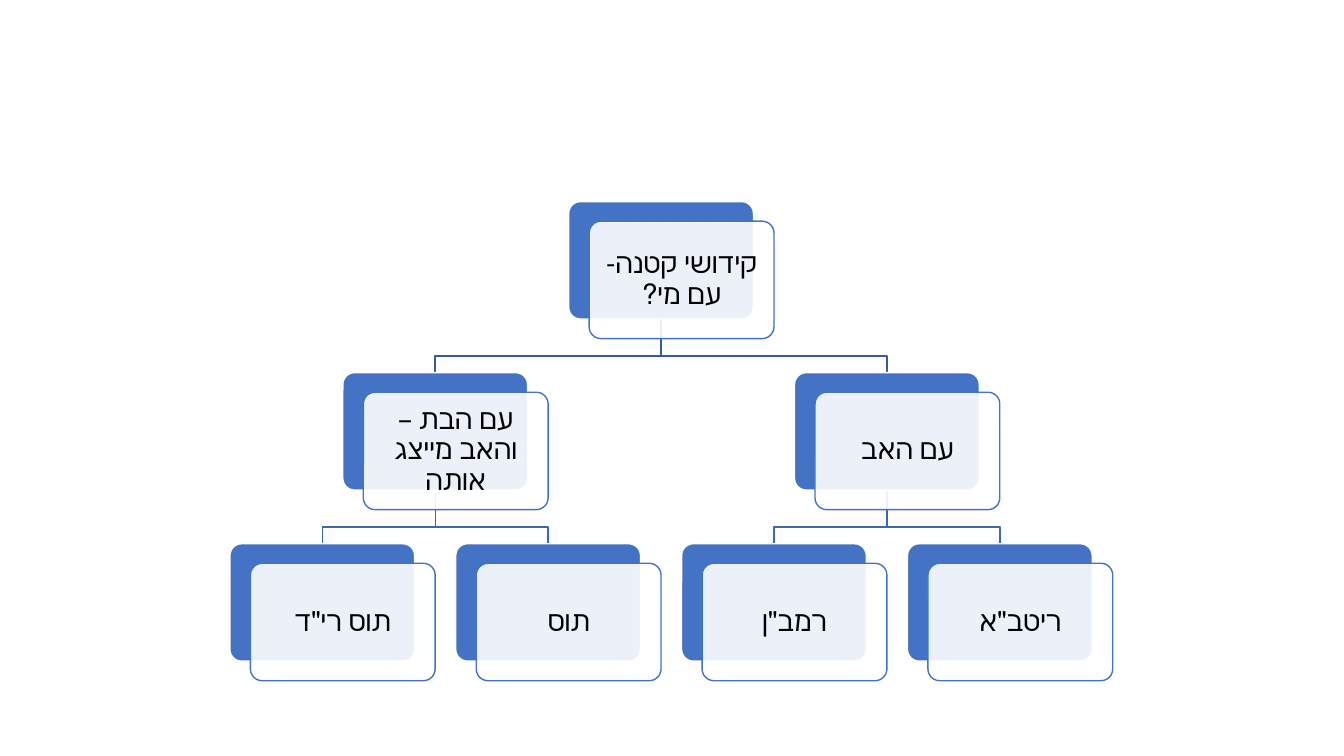
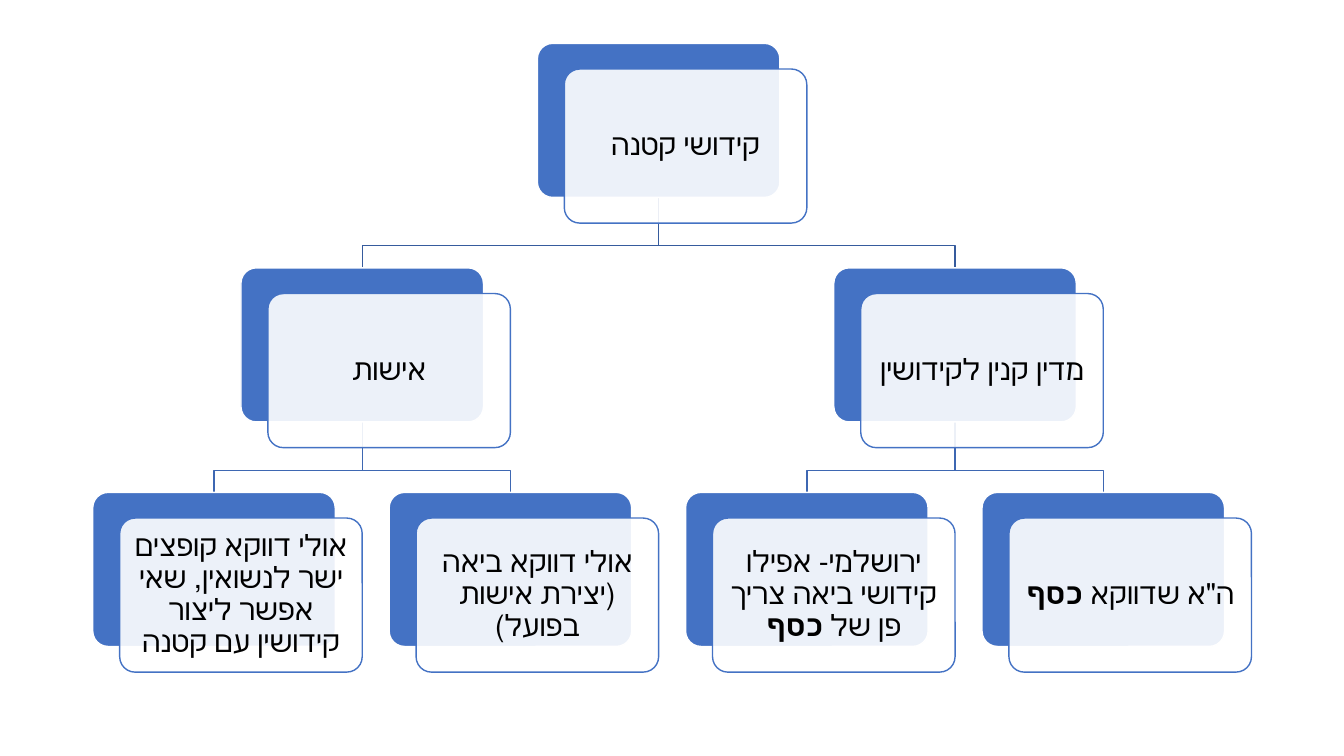
"""Two slides of right-to-left hierarchy trees made of layered cards."""
import pptx
import pptx.util
import pptx.dml.color
import pptx.enum.shapes
import pptx.enum.text
import pptx.oxml.ns
from lxml import etree

RGB = pptx.dml.color.RGBColor
BLUE = RGB(0x44, 0x72, 0xC4)
WHITE = RGB(0xFF, 0xFF, 0xFF)
BLACK = RGB(0x00, 0x00, 0x00)
LINKS = [RGB(0x36, 0x5B, 0x9D), RGB(0x3E, 0x67, 0xB2)]
FONT = "Calibri"
ROUND = pptx.enum.shapes.MSO_SHAPE.ROUNDED_RECTANGLE
Inches, Pt, qn = pptx.util.Inches, pptx.util.Pt, pptx.oxml.ns.qn

TREES = [
    {"left": 2.28, "top": 2, "step": 2.24, "size": 20, "rows": [
        [("קידושי קטנה- עם מי?", "")],
        [("עם הבת – והאב מייצג אותה", ""), ("עם האב", "")],
        [("תוס רי\"ד", ""), ("תוס", ""), ("רמב\"ן", ""), ("ריטב\"א", "")],
    ]},
    {"left": 0.92, "top": 0.43, "step": 2.94, "size": 21, "rows": [
        [("קידושי קטנה", "")],
        [("אישות", ""), ("מדין קנין לקידושין", "")],
        [("אולי דווקא קופצים ישר לנשואין, שאי אפשר ליצור קידושין עם קטנה", ""),
         ("אולי דווקא ביאה (יצירת אישות בפועל)", ""),
         ("ירושלמי- אפילו קידושי ביאה צריך פן של ", "כסף"),
         ("ה\"א שדווקא ", "כסף")],
    ]},
]


def link(slide, start, end, bar, color):
    """Draw a stepped line that turns at the height of the bar."""
    points = [start, (start[0], bar), (end[0], bar), end]
    points = [(Inches(x), Inches(y)) for x, y in points]
    path = slide.shapes.build_freeform(*points[0])
    path.add_line_segments(points[1:], close=False)
    shape = path.convert_to_shape()
    shape.shadow.inherit = False
    shape.fill.background()
    shape.line.color.rgb = color
    shape.line.width = Pt(1)


def card(slide, box, fill, edge):
    """Add one rounded card."""
    shape = slide.shapes.add_shape(ROUND, *map(Inches, box))
    shape.adjustments[0] = 0.1
    shape.shadow.inherit = False
    shape.fill.solid()
    shape.fill.fore_color.rgb = fill
    shape.line.color.rgb = edge
    shape.line.width = Pt(1)
    return shape


def write(shape, plain, strong, size):
    """Write centred right-to-left text with an optional bold ending."""
    frame = shape.text_frame
    frame.word_wrap = True
    frame.vertical_anchor = pptx.enum.text.MSO_ANCHOR.MIDDLE
    for side in ("left", "top", "right", "bottom"):
        setattr(frame, "margin_" + side, Pt(size * 0.3))
    para = frame.paragraphs[0]
    para.alignment = pptx.enum.text.PP_ALIGN.CENTER
    para.line_spacing = 0.9
    para.font.size = Pt(size)
    para.font.name = FONT
    para.font.color.rgb = BLACK
    para._p.pPr.set("rtl", "1")
    para.add_run().text = plain
    if strong:
        run = para.add_run()
        run.text = strong
        run.font.bold = True


def draw(slide, tree):
    """Place the links, then the cards, each parent centred on its children."""
    step, rows = tree["step"], tree["rows"]
    wide, high = step * 9 / 11, step * 0.52
    drop = step * 25 / 33
    leaves = len(rows[-1])

    def place(row, col):
        span = leaves / len(rows[row])
        slot = col * span + (span - 1) / 2
        return tree["left"] + slot * step, tree["top"] + row * drop

    for row in range(1, len(rows)):
        share = len(rows[row]) // len(rows[row - 1])
        for col in range(len(rows[row])):
            x, y = place(row, col)
            px, py = place(row - 1, col // share)
            link(slide, (px + wide / 2, py + high), (x + wide / 2, y),
                 y - high / 7, LINKS[row - 1])

    for row, texts in enumerate(rows):
        for col, (plain, strong) in enumerate(texts):
            x, y = place(row, col)
            card(slide, (x, y, wide, high), BLUE, WHITE)
            front = card(slide, (x + step / 11, y + high / 6, wide, high), WHITE, BLUE)
            tint = front.element.spPr.find(qn("a:solidFill")).find(qn("a:srgbClr"))
            etree.SubElement(tint, qn("a:alpha"), val="90000")
            write(front, plain, strong, tree["size"])


def main():
    """Build and save the deck."""
    deck = pptx.Presentation()
    deck.slide_width, deck.slide_height = Inches(13.33), Inches(7.5)
    for tree in TREES:
        draw(deck.slides.add_slide(deck.slide_layouts[6]), tree)
    deck.save("out.pptx")


if __name__ == "__main__":
    main()
